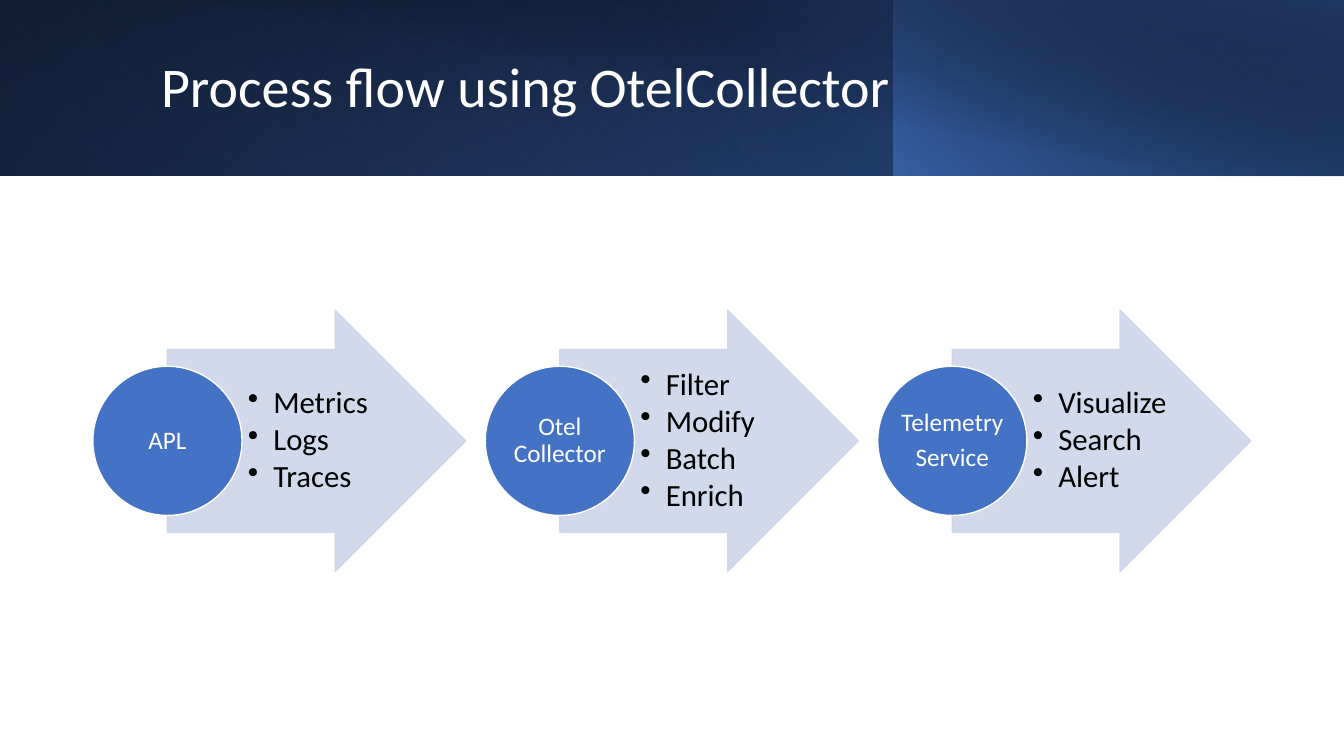
import pptx
import pptx.util
import pptx.dml.color
import pptx.enum.shapes
import pptx.enum.text
import pptx.oxml
import pptx.oxml.ns

TITLE = "Process flow using OtelCollector"
STEPS = [
    (["APL"], ["Metrics", "Logs", "Traces"]),
    (["Otel Collector"], ["Filter", "Modify", "Batch", "Enrich"]),
    (["Telemetry", "Service"], ["Visualize", "Search", "Alert"]),
]
HUES = {
    "white": "FFFFFF", "black": "000000", "blue": "4472C4",
    "navy": "203864", "steel": "2F5597", "pale": "CFD5EA",
}
BANDS = [
    ((0, 0, 33.87, 4.42), 0, True, 140, [(0, "black", 100), (100, "steel", 100)]),
    ((0, 0, 22.56, 4.42), 180, True, 230, [(20, "blue", 0), (100, "navy", 55)]),
    ((22.53, 0, 11.33, 4.42), 0, True, 220, [(0, "blue", 66), (100, "black", 30)]),
    ((1.28, 0, 32.59, 4.44), 0, False, 280, [(50, "black", 0), (99, "navy", 52)]),
]
PITCH = 9.89
LEFT = 2.34
MID = 11.11
DISC = 3.76
LABEL = 2.67

Cm = pptx.util.Cm
Pt = pptx.util.Pt
KIND = pptx.enum.shapes.MSO_SHAPE
ALIGN = pptx.enum.text.PP_ALIGN
qn = pptx.oxml.ns.qn

deck = pptx.Presentation()
deck.slide_width, deck.slide_height = Cm(33.87), Cm(19.05)
slide = deck.slides.add_slide(deck.slide_layouts[6])


def tint(name):
    return pptx.dml.color.RGBColor.from_string(HUES[name])


def fade(fill, alpha):
    hue = fill._xPr.find(qn("a:solidFill"))[0]
    hue.append(hue.makeelement(qn("a:alpha"), {"val": str(alpha * 1000)}))


def add_form(kind, box, fill=None, line=None, alpha=100):
    form = slide.shapes.add_shape(kind, *map(Cm, box))
    form.shadow.inherit = False
    if fill:
        form.fill.solid()
        form.fill.fore_color.rgb = tint(fill)
    if line:
        form.line.color.rgb = tint(line)
        form.line.width = Pt(1)
    else:
        form.line.fill.background()
    if alpha < 100:
        fade(form.fill, alpha)
        fade(form.line.fill, alpha)
    return form


def add_band(box, turn, flip, angle, stops):
    band = add_form(KIND.RECTANGLE, box)
    band.rotation = turn
    props = band._element.spPr
    if flip:
        props.find(qn("a:xfrm")).set("flipH", "1")
    marks = "".join(
        f'<a:gs pos="{pos * 1000}"><a:srgbClr val="{HUES[hue]}">'
        f'<a:alpha val="{alpha * 1000}"/></a:srgbClr></a:gs>'
        for pos, hue, alpha in stops)
    blend = pptx.oxml.parse_xml(
        f'<a:gradFill {pptx.oxml.ns.nsdecls("a")} rotWithShape="1">'
        f'<a:gsLst>{marks}</a:gsLst>'
        f'<a:lin ang="{angle * 60000}" scaled="0"/></a:gradFill>')
    props.find(qn("a:prstGeom")).addnext(blend)


def add_text(lines, box, size, color, align=ALIGN.LEFT, pad=(0, 0, 0, 0),
             after=0, bullet=False):
    frame = slide.shapes.add_textbox(*map(Cm, box)).text_frame
    frame.word_wrap = True
    frame.vertical_anchor = pptx.enum.text.MSO_ANCHOR.MIDDLE
    (frame.margin_left, frame.margin_top,
     frame.margin_right, frame.margin_bottom) = map(Cm, pad)
    for row, line in enumerate(lines):
        para = frame.add_paragraph() if row else frame.paragraphs[0]
        para.alignment = align
        para.line_spacing = 0.9
        para.space_after = Pt(after)
        run = para.add_run()
        run.text = line
        run.font.name = "Calibri"
        run.font.size = Pt(size)
        run.font.color.rgb = tint(color)
        if bullet:
            props = para._p.get_or_add_pPr()
            props.set("marL", str(Cm(0.64)))
            props.set("indent", str(-Cm(0.64)))
            props.append(props.makeelement(qn("a:buChar"), {"char": "•"}))


for band in BANDS:
    add_band(*band)
add_text([TITLE], (3.81, 0.81, 27.48, 2.87), 40, "white",
         pad=(0.25, 0.13, 0.25, 0.13))

for step, (name, items) in enumerate(STEPS):
    left = LEFT + step * PITCH
    core = left + DISC / 2
    arrow = add_form(KIND.RIGHT_ARROW, (core, MID - 3.29, 7.52, 6.58),
                     "pale", "pale", 90)
    arrow.adjustments[0], arrow.adjustments[1] = 0.7, 0.5
    add_text(items, (left + DISC, MID - 2.3, 3.68, 4.6), 22, "black",
             pad=(0.15, 0.05, 0.08, 0.05), after=2.6, bullet=True)
    add_form(KIND.OVAL, (left, MID - DISC / 2, DISC, DISC), "blue", "white")
    add_text(name, (core - LABEL / 2, MID - LABEL / 2, LABEL, LABEL), 18,
             "white", align=ALIGN.CENTER, pad=(0.03,) * 4, after=5.9)

deck.save("out.pptx")
